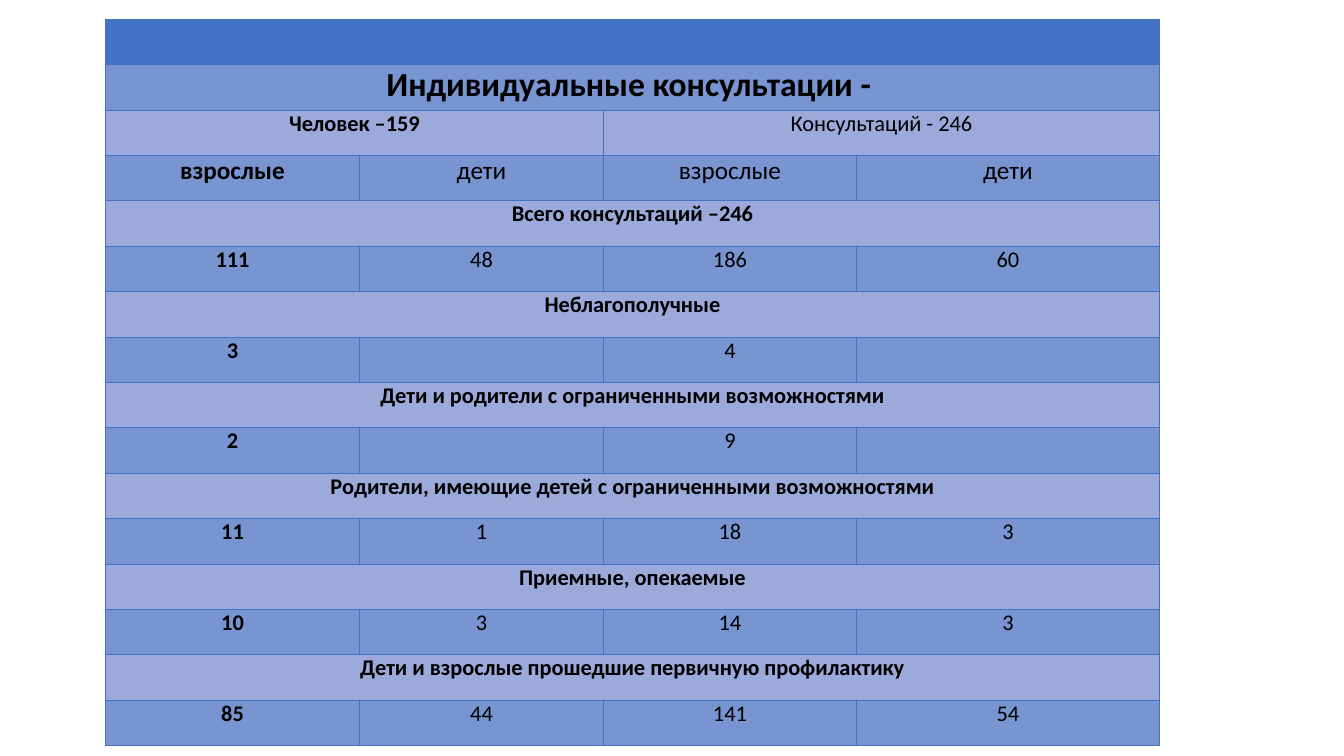
from dataclasses import dataclass

from lxml.etree import SubElement
from pptx import Presentation
from pptx.dml.color import RGBColor
from pptx.enum.text import PP_ALIGN
from pptx.oxml.ns import qn
from pptx.table import Table, _Cell
from pptx.util import Cm, Pt


@dataclass(frozen=True)
class Theme:
    font: str = "Calibri"
    header: str = "4472C4"
    dark_band: str = "7894D1"
    light_band: str = "9BAADA"
    border: str = "4472C4"
    text: str = "000000"
    title_size: int = 24
    subheading_size: int = 18
    body_size: int = 16
    border_width: float = 0.5


@dataclass(frozen=True)
class TableRow:
    texts: tuple[str, ...]
    size: int


THEME = Theme()
COLUMN_WIDTHS = (6.4, 6.15, 6.37, 7.64)
TABLE_HEIGHT = 18.31

GROUPS = (
    ("Всего консультаций –246", ("111", "48", "186", "60")),
    ("Неблагополучные", ("3", "", "4", "")),
    ("Дети и родители с ограниченными возможностями", ("2", "", "9", "")),
    ("Родители, имеющие детей с ограниченными возможностями", ("11", "1", "18", "3")),
    ("Приемные, опекаемые", ("10", "3", "14", "3")),
    ("Дети и взрослые прошедшие первичную профилактику", ("85", "44", "141", "54")),
)


def consultation_rows() -> list[TableRow]:
    rows = [
        TableRow(("",), THEME.body_size),
        TableRow(("Индивидуальные консультации - ",), THEME.title_size),
        TableRow(("Человек –159", "Консультаций - 246"), THEME.body_size),
        TableRow(("взрослые", "дети") * 2, THEME.subheading_size),
    ]
    for heading, counts in GROUPS:
        rows.append(TableRow((heading,), THEME.body_size))
        rows.append(TableRow(counts, THEME.body_size))
    return rows


def style_cell(cell: _Cell, fill: str) -> None:
    cell.margin_left = cell.margin_right = Cm(0.18)
    cell.margin_top = cell.margin_bottom = 0
    properties = cell._tc.get_or_add_tcPr()
    for side in ("L", "R", "T", "B"):
        line = SubElement(properties, qn(f"a:ln{side}"), w=str(Pt(THEME.border_width)))
        solid_fill = SubElement(line, qn("a:solidFill"))
        SubElement(solid_fill, qn("a:srgbClr"), val=THEME.border)
    cell.fill.solid()
    cell.fill.fore_color.rgb = RGBColor.from_string(fill)


def write_text(cell: _Cell, text: str, size: int, bold: bool) -> None:
    paragraph = cell.text_frame.paragraphs[0]
    paragraph.text = text
    paragraph.alignment = PP_ALIGN.CENTER
    for run in paragraph.runs:
        run.font.name = THEME.font
        run.font.size = Pt(size)
        run.font.bold = bold
        run.font.color.rgb = RGBColor.from_string(THEME.text)


def fill_row(table: Table, index: int, row: TableRow) -> None:
    band = THEME.dark_band if index % 2 else THEME.light_band
    for column in range(len(COLUMN_WIDTHS)):
        style_cell(table.cell(index, column), band if index else THEME.header)
    span = len(COLUMN_WIDTHS) // len(row.texts)
    for position, text in enumerate(row.texts):
        column = position * span
        cell = table.cell(index, column)
        if span > 1:
            cell.merge(table.cell(index, column + span - 1))
        write_text(cell, text, row.size, bold=position == 0)


def main() -> None:
    presentation = Presentation()
    presentation.slide_width = Cm(33.87)
    presentation.slide_height = Cm(19.05)
    slide = presentation.slides.add_slide(presentation.slide_layouts[6])

    rows = consultation_rows()
    shape = slide.shapes.add_table(
        len(rows), len(COLUMN_WIDTHS),
        Cm(2.66), Cm(0.48), Cm(sum(COLUMN_WIDTHS)), Cm(TABLE_HEIGHT),
    )
    table = shape.table
    table.first_row = False
    table.horz_banding = False
    for column, width in zip(table.columns, COLUMN_WIDTHS):
        column.width = Cm(width)
    for index, row in enumerate(rows):
        fill_row(table, index, row)

    presentation.save("out.pptx")


if __name__ == "__main__":
    main()
